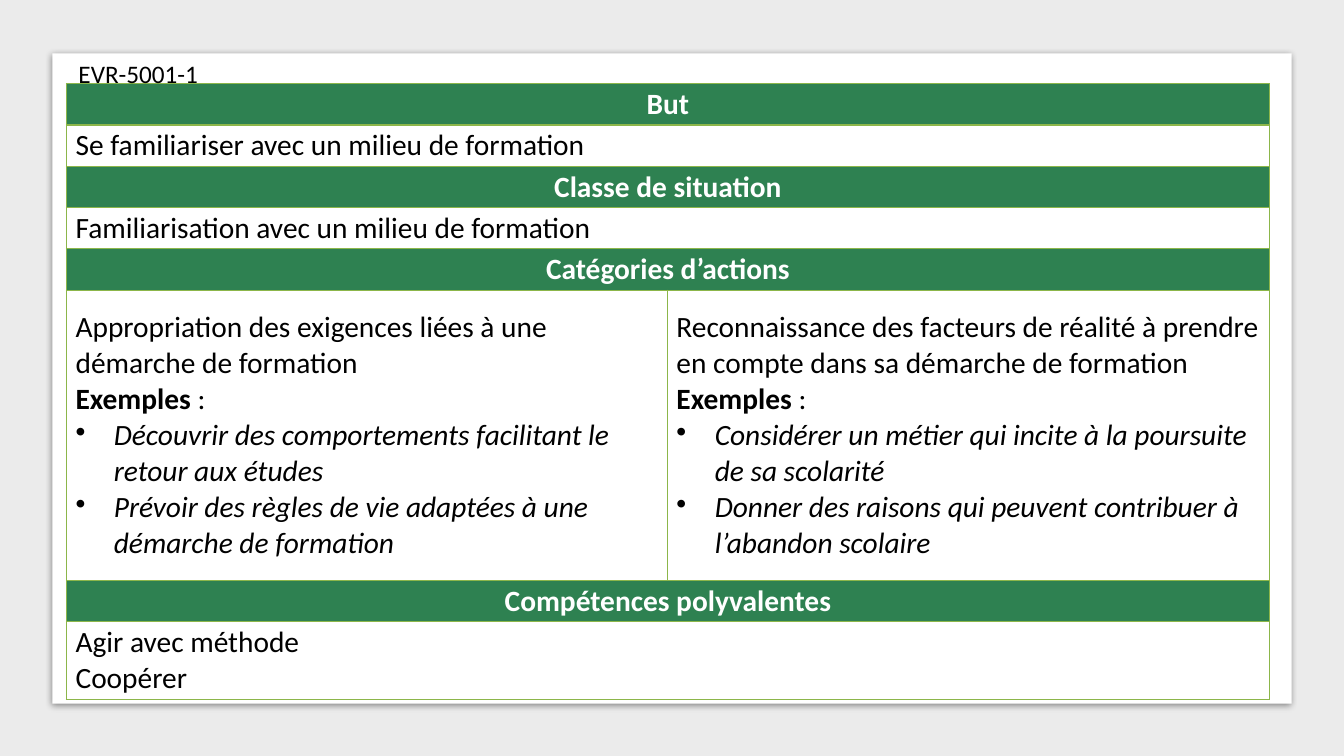
"""Build the EVR-5001-1 course summary slide."""
from lxml import etree
from pptx import Presentation
from pptx.dml.color import RGBColor
from pptx.enum.shapes import MSO_SHAPE
from pptx.enum.text import MSO_ANCHOR, PP_ALIGN
from pptx.oxml import parse_xml
from pptx.oxml.ns import nsdecls
from pptx.util import Inches, Pt

RECTANGLE = MSO_SHAPE.RECTANGLE
MIDDLE = MSO_ANCHOR.MIDDLE
CENTER, LEFT = PP_ALIGN.CENTER, PP_ALIGN.LEFT

THEME = {
    "font": "Calibri", "body": 21, "code": 18,
    "backdrop": "EBEBEB", "page": "FFFFFF", "band": "2E8151",
    "border": "8CB64A", "ink": "000000", "band_ink": "FFFFFF",
}
INDENT = Inches(0.38)
LINE_ROW, ACTIONS_ROW, SKILLS_ROW = 0.41, 2.88, 0.77

SECTIONS = [
    ("But", LINE_ROW, [["Se familiariser avec un milieu de formation"]]),
    ("Classe de situation", LINE_ROW, [["Familiarisation avec un milieu de formation"]]),
    ("Catégories d’actions", ACTIONS_ROW, [
        ["Appropriation des exigences liées à une démarche de formation",
         ("Exemples", " :"),
         "• Découvrir des comportements facilitant le retour aux études",
         "• Prévoir des règles de vie adaptées à une démarche de formation"],
        ["Reconnaissance des facteurs de réalité à prendre en compte dans sa démarche de formation",
         ("Exemples", " :"),
         "• Considérer un métier qui incite à la poursuite de sa scolarité",
         "• Donner des raisons qui peuvent contribuer à l’abandon scolaire"],
    ]),
    ("Compétences polyvalentes", SKILLS_ROW, [["Agir avec méthode", "Coopérer"]]),
]


def write_line(paragraph, line, color, heading=False):
    """Write one line: a plain text, a bulleted text, or a (bold, plain) pair."""
    paragraph.alignment = CENTER if heading else LEFT
    font = paragraph.font
    font.name, font.size = THEME["font"], Pt(THEME["body"])
    font.color.rgb = RGBColor.from_string(color)
    bulleted = line[0].startswith("•")
    font.italic = bulleted
    if isinstance(line, tuple):
        for text, bold in zip(line, (True, False)):
            run = paragraph.add_run()
            run.text, run.font.bold = text, bold
            run.font.name, run.font.size = font.name, font.size
            run.font.color.rgb = font.color.rgb
        return
    font.bold = heading
    paragraph.text = line.removeprefix("• ")
    if bulleted:
        properties = paragraph._p.get_or_add_pPr()
        properties.set("marL", str(INDENT))
        properties.set("indent", str(-INDENT))
        bullet = parse_xml(f'<a:buChar {nsdecls("a")} char="•"/>')
        properties.insert_element_before(bullet, "a:tabLst", "a:defRPr", "a:extLst")


def fill_cell(cell, lines, fill, color, heading=False):
    """Border, fill and write one table cell."""
    cell.vertical_anchor = MIDDLE
    cell.margin_left = cell.margin_right = Inches(0.09)
    cell.margin_top = cell.margin_bottom = 0
    for side in ("lnL", "lnR", "lnT", "lnB"):
        cell._tc.get_or_add_tcPr().append(parse_xml(
            f'<a:{side} {nsdecls("a")} w="{Pt(1)}"><a:solidFill>'
            f'<a:srgbClr val="{THEME["border"]}"/></a:solidFill></a:{side}>'))
    cell.fill.solid()
    cell.fill.fore_color.rgb = RGBColor.from_string(fill)
    frame = cell.text_frame
    for index, line in enumerate(lines):
        paragraph = frame.add_paragraph() if index else frame.paragraphs[0]
        write_line(paragraph, line, color, heading)


deck = Presentation()
deck.slide_width, deck.slide_height = Inches(13.33), Inches(7.5)
slide = deck.slides.add_slide(deck.slide_layouts[6])

panels = [
    ((0, 0, 13.33, 7.5), THEME["backdrop"]),
    ((0.52, 0.53, 12.29, 6.45), THEME["page"]),
]
for box, color in panels:
    panel = slide.shapes.add_shape(RECTANGLE, *map(Inches, box))
    panel.fill.solid()
    panel.fill.fore_color.rgb = RGBColor.from_string(color)
    panel.line.fill.background()
    panel.shadow.inherit = False

page_effects = panel._element.spPr.find("{*}effectLst")
page_effects.append(etree.fromstring(
    f'<a:outerShdw {nsdecls("a")} blurRad="{Pt(5)}" dist="{Pt(1.4)}" dir="5400000">'
    '<a:srgbClr val="000000"><a:alpha val="43000"/></a:srgbClr></a:outerShdw>'))

heights = [height for _, body, _ in SECTIONS for height in (LINE_ROW, body)]
summary = slide.shapes.add_table(
    len(heights), 2, Inches(0.66), Inches(0.83), Inches(11.93), Inches(sum(heights))).table
for column, width in zip(summary.columns, (5.96, 5.97)):
    column.width = Inches(width)
for row, height in zip(summary.rows, heights):
    row.height = Inches(height)

for number, (heading, _, columns) in enumerate(SECTIONS):
    top = 2 * number
    rows = [(top, [[heading]], THEME["band"], THEME["band_ink"], True),
            (top + 1, columns, THEME["page"], THEME["ink"], False)]
    for row, contents, fill, color, is_heading in rows:
        if len(contents) == 1:
            summary.cell(row, 0).merge(summary.cell(row, 1))
        for column in range(2):
            lines = contents[column] if column < len(contents) else []
            fill_cell(summary.cell(row, column), lines, fill, color, is_heading)

course_code = slide.shapes.add_textbox(Inches(0.68), Inches(0.53), Inches(1.49), Inches(0.4))
course_code.text_frame.word_wrap = True
code_line = course_code.text_frame.paragraphs[0]
code_line.text = "EVR-5001-1"
code_line.font.name, code_line.font.size = THEME["font"], Pt(THEME["code"])
code_line.font.color.rgb = RGBColor.from_string(THEME["ink"])

deck.save("out.pptx")
